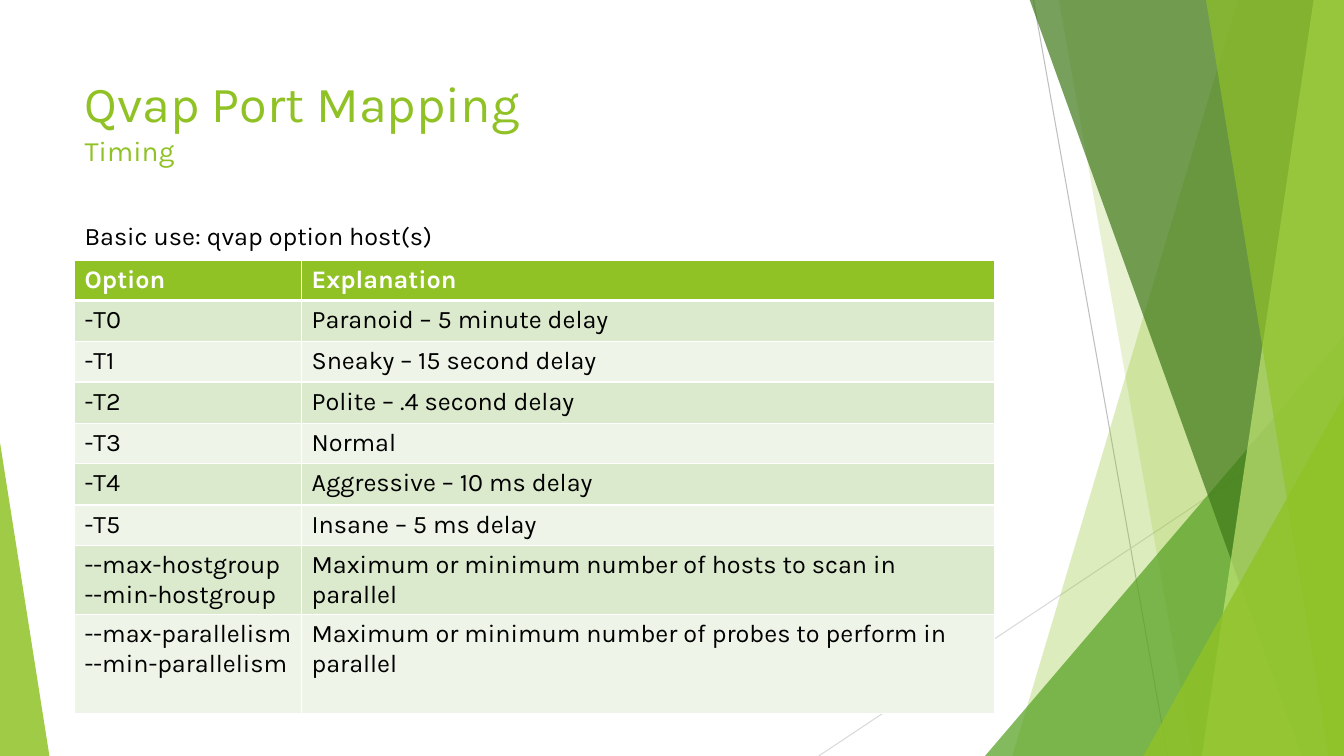
from dataclasses import dataclass

from lxml import etree
from pptx import Presentation
from pptx.dml.color import RGBColor
from pptx.enum.shapes import MSO_CONNECTOR, MSO_SHAPE
from pptx.enum.text import MSO_ANCHOR, MSO_AUTO_SIZE, PP_ALIGN
from pptx.oxml.ns import qn
from pptx.util import Emu, Pt

STRAIGHT = MSO_CONNECTOR.STRAIGHT
TRIANGLE = MSO_SHAPE.ISOSCELES_TRIANGLE
TOP = MSO_ANCHOR.TOP
LEFT = PP_ALIGN.LEFT
NO_FIT = MSO_AUTO_SIZE.NONE
GROW = MSO_AUTO_SIZE.SHAPE_TO_FIT_TEXT

EMU_PER_PX = 9144  # 100 px to the inch
WIDTH, HEIGHT = 1333, 750
FONT = "Karla"
GREEN, WHITE, BLACK = "90C226", "FFFFFF", "000000"
BANDS = ("DBE9CD", "EEF4E8")
TITLE_ONLY = 5


@dataclass(frozen=True)
class Ray:
    start: tuple[int, int]
    end: tuple[int, int]
    color: str


@dataclass(frozen=True)
class Shard:
    """Four-sided band against the right edge of the slide."""
    top_left: int
    bottom_left: int
    color: str
    opacity: int


@dataclass(frozen=True)
class Wedge:
    """Right-angled triangle standing on the bottom edge of the slide."""
    left: int
    top: int
    width: int
    apex: int
    color: str
    opacity: int


@dataclass(frozen=True)
class Option:
    flags: tuple[str, ...]
    explanation: str
    height: int = 40


RAYS = (
    Ray((1025, 0), (1158, 750), "BFBFBF"),
    Ray((1333, 403), (812, 750), "D9D9D9"),
)
FACETS = (
    Shard(1228, 1004, GREEN, 30),
    Shard(1050, 1183, GREEN, 20),
    Wedge(977, 333, 356, 1, "54A021", 72),
    Shard(1021, 1291, "3F7819", 70),
    Shard(1303, 1192, "C0E474", 70),
    Shard(1196, 1318, GREEN, 65),
    Wedge(1134, 393, 199, 1, GREEN, 80),
    Wedge(0, 439, 49, 0, GREEN, 85),
)
OPTIONS = (
    Option(("Option",), "Explanation"),
    Option(("-T0",), "Paranoid – 5 minute delay", 41),
    Option(("-T1",), "Sneaky – 15 second delay"),
    Option(("-T2",), "Polite – .4 second delay", 41),
    Option(("-T3",), "Normal"),
    Option(("-T4",), "Aggressive – 10 ms delay", 41),
    Option(("-T5",), "Insane – 5 ms delay"),
    Option(("--max-hostgroup", "--min-hostgroup"),
           "Maximum or minimum number of hosts to scan in parallel", 68),
    Option(("--max-parallelism", "--min-parallelism"),
           "Maximum or minimum number of probes to perform in parallel", 98),
)
COLUMNS = (225, 687)


def px(length: int) -> Emu:
    return Emu(length * EMU_PER_PX)


def rgb(color: str) -> RGBColor:
    return RGBColor.from_string(color)


def add_span(para, text: str, size: int, color: str, bold: bool = False) -> None:
    span = para.add_run()
    span.text = text
    span.font.name = FONT
    span.font.size = Pt(size)
    span.font.bold = bold
    span.font.color.rgb = rgb(color)


def draw_ray(page, ray: Ray) -> None:
    line = page.shapes.add_connector(STRAIGHT, *map(px, ray.start + ray.end))
    line.line.color.rgb = rgb(ray.color)
    line.line.width = Pt(0.75)
    etree.SubElement(line._element.spPr, qn("a:effectLst"))


def draw_facet(page, facet: Shard | Wedge) -> None:
    if isinstance(facet, Shard):
        builder = page.shapes.build_freeform(facet.top_left, -1, scale=EMU_PER_PX)
        builder.add_line_segments(
            [(WIDTH, -1), (WIDTH, HEIGHT), (facet.bottom_left, HEIGHT)], close=True)
        shape = builder.convert_to_shape()
    else:
        shape = page.shapes.add_shape(
            TRIANGLE, px(facet.left), px(facet.top),
            px(facet.width), px(HEIGHT - facet.top))
        shape.adjustments[0] = facet.apex
    shape.shadow.inherit = False
    shape.line.fill.background()
    shape.fill.solid()
    shape.fill.fore_color.rgb = rgb(facet.color)
    color = shape._element.spPr.find(qn("a:solidFill"))[0]
    etree.SubElement(color, qn("a:alpha"), val=str(facet.opacity * 1000))


def write_title(page) -> None:
    title = page.shapes.title
    title.left, title.top, title.width, title.height = map(px, (74, 67, 940, 144))
    frame = title.text_frame
    frame.auto_size = NO_FIT
    frame.vertical_anchor = TOP
    para = frame.paragraphs[0]
    para.alignment = LEFT
    add_span(para, "Qvap Port Mapping", 36, GREEN)
    para.add_line_break()
    add_span(para, "Timing", 20, GREEN)


def write_usage(page) -> None:
    box = page.shapes.add_textbox(*map(px, (74, 214, 667, 40)))
    frame = box.text_frame
    frame.word_wrap = True
    frame.auto_size = GROW
    add_span(frame.paragraphs[0], "Basic use: qvap option host(s)", 18, BLACK)


def set_borders(cell, top: int, bottom: int) -> None:
    properties = cell._tc.get_or_add_tcPr()
    for side, width in (("L", 1), ("R", 1), ("T", top), ("B", bottom)):
        line = etree.SubElement(properties, qn(f"a:ln{side}"), w=str(Pt(width)))
        fill = etree.SubElement(line, qn("a:solidFill"))
        etree.SubElement(fill, qn("a:srgbClr"), val=WHITE)


def fill_cell(cell, lines: tuple[str, ...], row: int) -> None:
    header = row == 0
    set_borders(cell, top=3 if row == 1 else 1, bottom=3 if header else 1)
    cell.fill.solid()
    cell.fill.fore_color.rgb = rgb(GREEN if header else BANDS[(row - 1) % 2])
    frame = cell.text_frame
    for index, text in enumerate(lines):
        para = frame.add_paragraph() if index else frame.paragraphs[0]
        add_span(para, text, 18, WHITE if header else BLACK, header)


def draw_options(page) -> None:
    height = sum(option.height for option in OPTIONS)
    table = page.shapes.add_table(
        len(OPTIONS), len(COLUMNS), px(74), px(258), px(sum(COLUMNS)), px(height)).table
    for column, width in zip(table.columns, COLUMNS):
        column.width = px(width)
    for row, option in enumerate(OPTIONS):
        table.rows[row].height = px(option.height)
        fill_cell(table.cell(row, 0), option.flags, row)
        fill_cell(table.cell(row, 1), (option.explanation,), row)


def main() -> None:
    deck = Presentation()
    deck.slide_width, deck.slide_height = px(WIDTH), px(HEIGHT)
    page = deck.slides.add_slide(deck.slide_layouts[TITLE_ONLY])
    for ray in RAYS:
        draw_ray(page, ray)
    for facet in FACETS:
        draw_facet(page, facet)
    write_title(page)
    draw_options(page)
    write_usage(page)
    deck.save("out.pptx")


if __name__ == "__main__":
    main()
